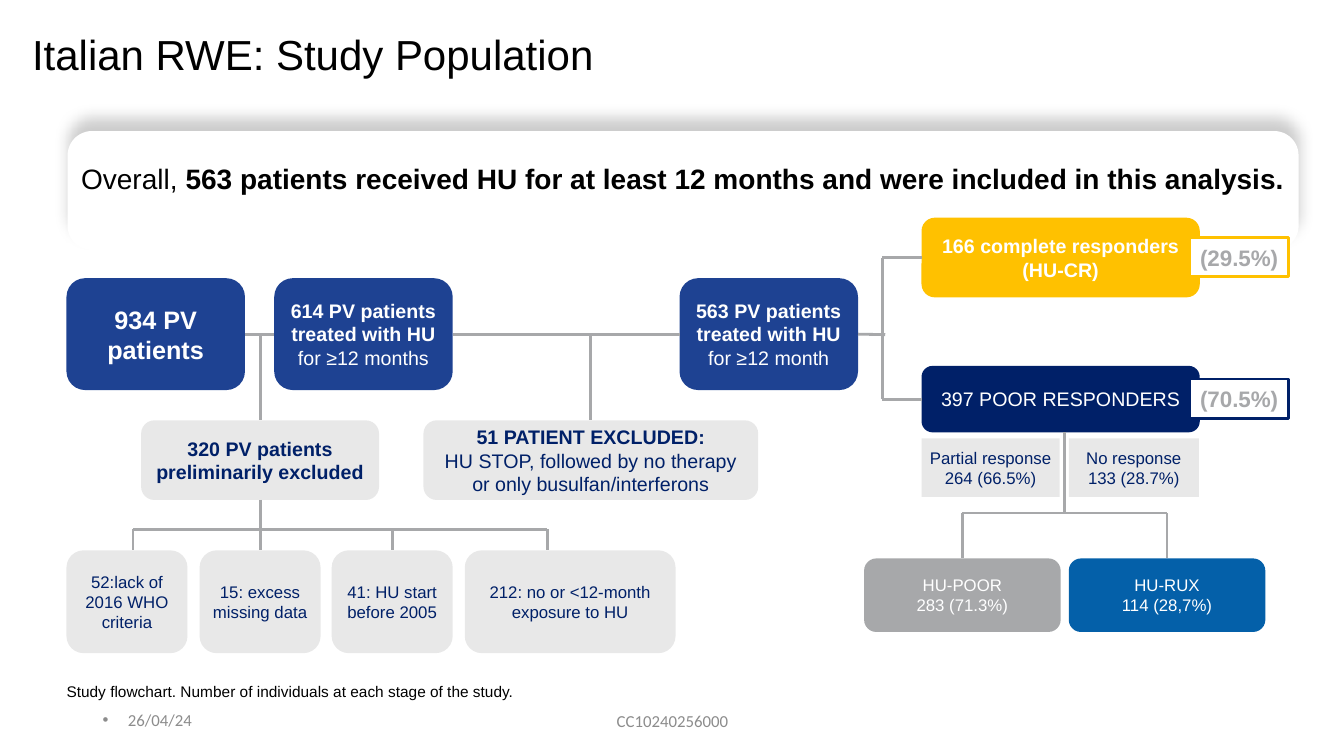
from dataclasses import dataclass

from lxml import etree
from pptx import Presentation
from pptx.dml.color import RGBColor
from pptx.enum import shapes as kinds, text as te
from pptx.oxml import ns
from pptx.util import Inches, Pt


@dataclass(frozen=True)
class Theme:
    """Colours, fonts and type sizes of the slide."""
    white: str = "FFFFFF"
    black: str = "000000"
    royal: str = "1E4292"
    navy: str = "002068"
    blue: str = "0460A9"
    gold: str = "FFC100"
    pale: str = "E8E8E8"
    gray: str = "A7A8AA"
    dim: str = "8C8C8C"
    sans: str = "Arial"
    foot: str = "Calibri"
    title: int = 30
    lead: int = 20
    start: int = 18
    badge: int = 16
    step: int = 14
    small: int = 12
    note: int = 11
    rule: int = 2


T = Theme()
ROUND = kinds.MSO_SHAPE.ROUNDED_RECTANGLE
RECT = kinds.MSO_SHAPE.RECTANGLE
TOP, LEFT, BOTTOM, RIGHT = range(4)


def rgb(code):
    """Turn a hex code into a colour."""
    return RGBColor.from_string(code)


def write(shape, runs, size, color, inset, font=T.sans, center=True, mid=True):
    """Fill a shape with one paragraph of (text, bold) runs."""
    frame = shape.text_frame
    frame.word_wrap = True
    frame.vertical_anchor = te.MSO_ANCHOR.MIDDLE if mid else te.MSO_ANCHOR.TOP
    frame.margin_left, frame.margin_top, frame.margin_right, frame.margin_bottom = map(Inches, inset)
    para = frame.paragraphs[0]
    para.alignment = te.PP_ALIGN.CENTER if center else te.PP_ALIGN.LEFT
    for words, bold in runs:
        for i, line in enumerate(words.split("\n")):
            if i:
                para.add_line_break()
            if line:
                run = para.add_run()
                run.text = line
                run.font.name, run.font.size, run.font.bold = font, Pt(size), bold
                run.font.color.rgb = rgb(color)
    return para


def label(tree, box, runs, size, color, inset=(0.1, 0.05, 0.1, 0.05), **style):
    """Add a text box and return its paragraph."""
    return write(tree.add_textbox(*map(Inches, box)), runs, size, color, inset, **style)


def card(tree, box, fill, runs=(), size=T.step, color=T.white, pad=0.08, kind=ROUND, edge=None):
    """Add a filled box with centred text."""
    shape = tree.add_shape(kind, *map(Inches, box))
    shape.shadow.inherit = False
    shape.fill.solid()
    shape.fill.fore_color.rgb = rgb(fill)
    if edge:
        shape.line.color.rgb = rgb(edge)
        shape.line.width = Pt(T.rule)
    else:
        shape.line.fill.background()
    write(shape, runs, size, color, (pad,) * 4)
    return shape


def link(tree, start, end, head=None, tail=None):
    """Draw a gray line, joined to (shape, site) at head or tail."""
    line = tree.add_connector(kinds.MSO_CONNECTOR.STRAIGHT, *map(Inches, (*start, *end)))
    line.line.color.rgb = rgb(T.gray)
    line.line.width = Pt(T.rule)
    etree.SubElement(line._element.spPr, ns.qn("a:effectLst"))
    if head:
        line.begin_connect(*head)
    if tail:
        line.end_connect(*tail)


def banner(tree, box):
    """Place the shadowed panel with the key message."""
    x, y, w, h = box
    panel = card(tree, box, T.white)
    panel.adjustments[0] = 0.205
    glow = etree.SubElement(panel._element.spPr.find(ns.qn("a:effectLst")), ns.qn("a:outerShdw"),
                            blurRad=str(Pt(10)), dist=str(Pt(10)), dir="16200000",
                            algn="ctr", rotWithShape="0")
    tint = etree.SubElement(glow, ns.qn("a:srgbClr"), val=T.black)
    etree.SubElement(tint, ns.qn("a:alpha"), val="20000")
    label(tree, (x, y + 0.25, w, 0.44), [
        ("Overall, ", False),
        ("563 patients received HU for at least 12 months and were included in this analysis.", True),
    ], T.lead, T.black, mid=False)


def flow(tree, box):
    """Place the main steps and exclusions; return the last step and early exclusion."""
    x, y, w, h = box
    wide, tall = 1.77, 1.11
    axis = y + tall / 2
    steps = [
        (0, [("934 PV\npatients", True)], T.start),
        (2.06, [("614 PV patients treated with HU\n", True), ("for ≥12 months", False)], T.step),
        (w - wide, [("563 PV patients treated with HU ", True), ("for ≥12 month", False)], T.step),
    ]
    cards = [card(tree, (x + dx, y, wide, tall), T.royal, runs, size) for dx, runs, size in steps]
    for a, b in zip(cards, cards[1:]):
        link(tree, (x, axis), (x + w, axis), (a, RIGHT), (b, LEFT))
    drops = [
        (0.74, 2.36, [("320 PV patients\npreliminarily excluded", True)]),
        (3.54, 3.32, [("51 PATIENT EXCLUDED:\n", True),
                      ("HU STOP, followed by no therapy\nor only busulfan/interferons", False)]),
    ]
    outs = []
    for dx, dw, runs in drops:
        out = card(tree, (x + dx, y + h - 0.79, dw, 0.79), T.pale, runs, color=T.navy)
        mid = x + dx + dw / 2
        link(tree, (mid, axis), (mid, y + h - 0.79), tail=(out, TOP))
        outs.append(out)
    return cards[-1], outs[0]


def reasons(tree, box, parent):
    """Place the reasons for early exclusion under their parent."""
    x, y, w, h = box
    rail = y - 0.21
    items = [
        (0, 1.2, 0.66, "52:lack of 2016 WHO criteria"),
        (1.32, 1.2, 1.92, "15: excess missing data"),
        (2.63, 1.2, 3.23, "41: HU start before 2005"),
        (w - 2.09, 2.09, 4.77, "212: no or <12-month exposure to HU"),
    ]
    for dx, dw, stem, words in items:
        item = card(tree, (x + dx, y, dw, h), T.pale, [(words, False)], T.small, T.navy)
        joined = abs(dx + dw / 2 - stem) < 0.02
        link(tree, (x + stem, rail), (x + stem, y),
             (parent, BOTTOM) if stem == 1.92 else None, (item, TOP) if joined else None)
    link(tree, (x + items[0][2], rail), (x + items[-1][2], rail))


def replies(tree, box, source):
    """Place responder groups, their shares and the treatment split."""
    x, y, w, h = box
    left, wide = x + 0.39, 2.76
    groups = [
        (0, 0.79, T.gold, "166 complete responders\n(HU-CR)", True, "(29.5%)"),
        (1.47, 0.66, T.navy, "397 POOR RESPONDERS", False, "(70.5%)"),
    ]
    mids = []
    for dy, tall, fill, words, bold, share in groups:
        mid = y + dy + tall / 2
        group = card(tree, (left, y + dy, wide, tall), fill, [(words, bold)], pad=0)
        link(tree, (x, mid), (left, mid), tail=(group, LEFT))
        card(tree, (x + w - 0.98, mid - 0.2, 0.98, 0.39), T.white, [(share, True)],
             T.badge, T.gray, kind=RECT, edge=fill)
        mids.append(mid)
    link(tree, (x, mids[0]), (x, mids[1]))
    link(tree, (x - 0.24, y + 1.16), (x + 0.03, y + 1.16), (source, RIGHT))

    for dx, dw, words in [(0.39, 1.37, "Partial response\n264 (66.5%)"),
                          (1.85, 1.29, "No response\n133 (28.7%)")]:
        card(tree, (x + dx, y + 2.19, dw, 0.58), T.pale, [(words, False)],
             T.small, T.navy, kind=RECT)

    rail, stem = y + 2.93, x + 1.81
    link(tree, (stem, y + 2.13), (stem, rail))
    arms = []
    for dx, fill, words in [(-0.18, T.gray, "HU-POOR\n283 (71.3%)"),
                            (1.85, T.blue, "HU-RUX\n114 (28,7%)")]:
        arm = card(tree, (x + dx, y + h - 0.73, 1.95, 0.73), fill, [(words, False)], T.small, pad=0)
        mid = x + dx + 1.95 / 2
        link(tree, (mid, rail), (mid, y + h - 0.73), tail=(arm, TOP))
        arms.append(mid)
    link(tree, (arms[0], rail), (arms[1], rail))


def footer(tree, box):
    """Place the caption, date and document code."""
    x, y, w, h = box
    label(tree, (x, y, w, 0.27),
          [("Study flowchart. Number of individuals at each stage of the study.", False)],
          T.note, T.black, (0,) * 4, center=False, mid=False)
    base = y + h - 0.4
    date = label(tree, (x + 0.26, base, 3, 0.4), [("26/04/24", False)],
                 T.small, T.dim, font=T.foot, center=False)
    props = date._p.get_or_add_pPr()
    props.set("marL", str(Inches(0.25)))
    props.set("indent", str(-Inches(0.25)))
    etree.SubElement(props, ns.qn("a:buFont"), typeface=T.sans)
    etree.SubElement(props, ns.qn("a:buChar"), char="•")
    date.line_spacing = 0.9
    label(tree, (x + 3.76, base, 4.5, 0.4), [("CC10240256000", False)],
          T.small, T.dim, font=T.foot)


def main():
    """Build and save the slide."""
    deck = Presentation()
    deck.slide_width, deck.slide_height = Inches(13.33), Inches(7.5)
    tree = deck.slides.add_slide(deck.slide_layouts[6]).shapes
    banner(tree, (0.67, 1.3, 12.21, 1.18))
    head = label(tree, (0.22, 0.09, 11.5, 0.94), [("Italian RWE: Study Population", False)],
                 T.title, T.black, center=False)
    head.line_spacing = 0.95
    last, early = flow(tree, (0.66, 2.76, 7.85, 2.2))
    reasons(tree, (0.66, 5.46, 6.04, 1.02), early)
    replies(tree, (8.75, 2.16, 4.03, 4.11), last)
    footer(tree, (0.66, 6.77, 12.01, 0.58))
    deck.save("out.pptx")


if __name__ == "__main__":
    main()
